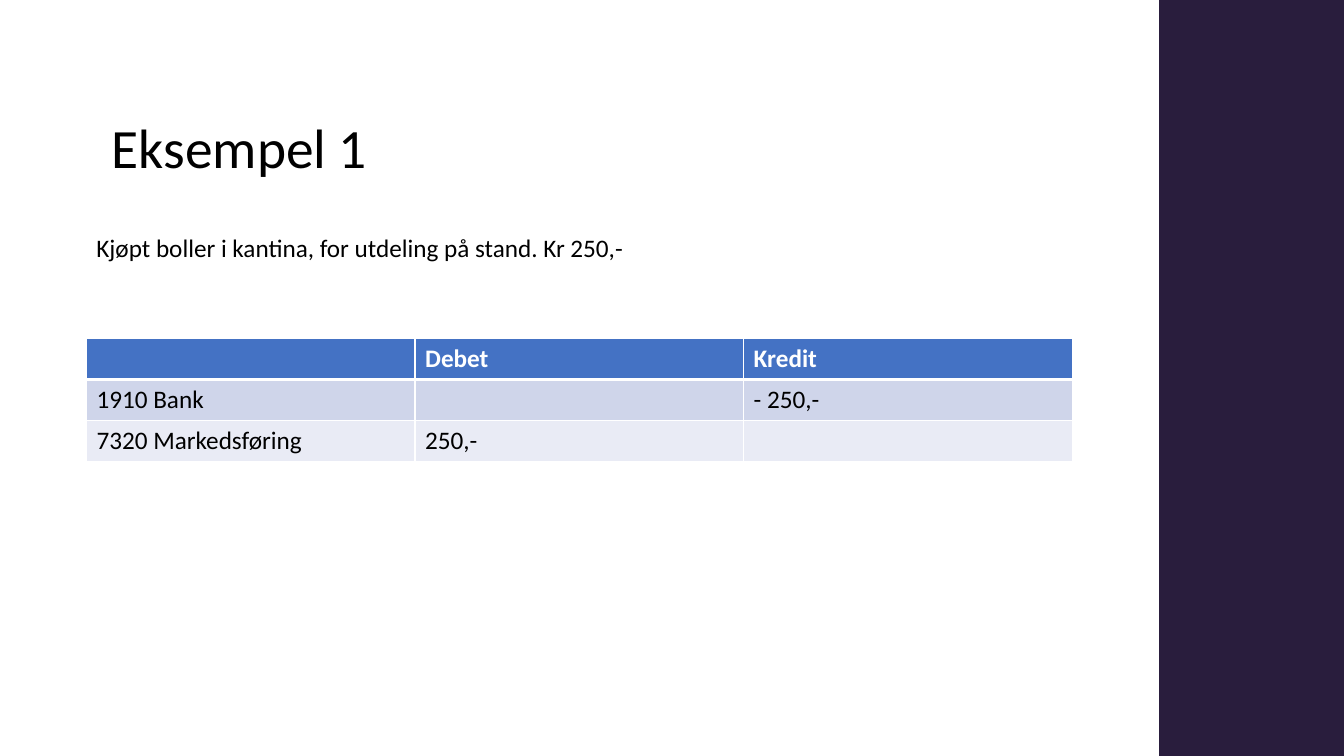
from lxml import etree
from pptx import Presentation
from pptx.dml.color import RGBColor
from pptx.enum.shapes import MSO_SHAPE
from pptx.enum.text import MSO_ANCHOR
from pptx.oxml.ns import qn
from pptx.util import Cm, Pt

RECT = MSO_SHAPE.RECTANGLE
TOP, MIDDLE = MSO_ANCHOR.TOP, MSO_ANCHOR.MIDDLE

COLORS = {
    "text": "000000",
    "white": "FFFFFF",
    "band": "291D3D",
    "head": "4472C4",
    "odd": "CFD5EA",
    "even": "E9EBF5",
}
FONT = "Calibri"
LEFT, WIDTH = 2.18, 24.84
ROW = 1.03
LEDGER = [
    ["", "Debet", "Kredit"],
    ["1910 Bank", "", "- 250,-"],
    ["7320 Markedsføring", "250,-", ""],
]


class Deck:
    """Holds the style and the current slide."""

    def __init__(self):
        self.prs = Presentation()
        self.prs.slide_width = Cm(33.87)
        self.prs.slide_height = Cm(19.05)
        self.slide = self.prs.slides.add_slide(self.prs.slide_layouts[6])

    def color(self, name):
        return RGBColor.from_string(COLORS[name])

    def style(self, para, size, color="text", bold=False):
        for run in para.runs:
            run.font.name = FONT
            run.font.size = Pt(size)
            run.font.bold = bold
            run.font.color.rgb = self.color(color)

    def rect(self, x, y, w, h, fill):
        shape = self.slide.shapes.add_shape(RECT, Cm(x), Cm(y), Cm(w), Cm(h))
        shape.shadow.inherit = False
        shape.fill.solid()
        shape.fill.fore_color.rgb = self.color(fill)
        shape.line.fill.background()

    def text(self, x, y, w, h, words, size, anchor=TOP, spacing=None):
        box = self.slide.shapes.add_textbox(Cm(x), Cm(y), Cm(w), Cm(h))
        frame = box.text_frame
        frame.word_wrap = True
        frame.vertical_anchor = anchor
        frame.text = words
        para = frame.paragraphs[0]
        para.line_spacing = spacing
        self.style(para, size)

    def border(self, cell, side, points):
        props = cell._tc.get_or_add_tcPr()
        line = etree.SubElement(props, qn("a:ln" + side), w=str(Pt(points)))
        fill = etree.SubElement(line, qn("a:solidFill"))
        etree.SubElement(fill, qn("a:srgbClr"), val=COLORS["white"])

    def table(self, x, y, w, row_h, data, size):
        """Draws a banded table with a thick rule under its header."""
        rows, cols = len(data), len(data[0])
        table = self.slide.shapes.add_table(
            rows, cols, Cm(x), Cm(y), Cm(w), Cm(row_h * rows)).table
        for r, row in enumerate(data):
            table.rows[r].height = Cm(row_h)
            fill = "head" if r == 0 else ("even", "odd")[r % 2]
            widths = {"L": 1, "R": 1, "T": 3 if r == 1 else 1,
                      "B": 3 if r == 0 else 1}
            for c, words in enumerate(row):
                cell = table.cell(r, c)
                for side, points in widths.items():
                    self.border(cell, side, points)
                cell.fill.solid()
                cell.fill.fore_color.rgb = self.color(fill)
                cell.text = words
                self.style(cell.text_frame.paragraphs[0], size,
                           "text" if r else "white", r == 0)


def main():
    deck = Deck()
    deck.rect(29.21, 0, 4.66, 19.05, "band")
    deck.text(2.57, 2.9, WIDTH, 1.8, "Eksempel 1", 39.6, MIDDLE, 0.9)
    deck.table(LEFT, 8.53, WIDTH, ROW, LEDGER, 18)
    deck.text(LEFT, 5.72, WIDTH, 1.02,
              "Kjøpt boller i kantina, for utdeling på stand. Kr 250,-", 18)
    deck.prs.save("out.pptx")


if __name__ == "__main__":
    main()
